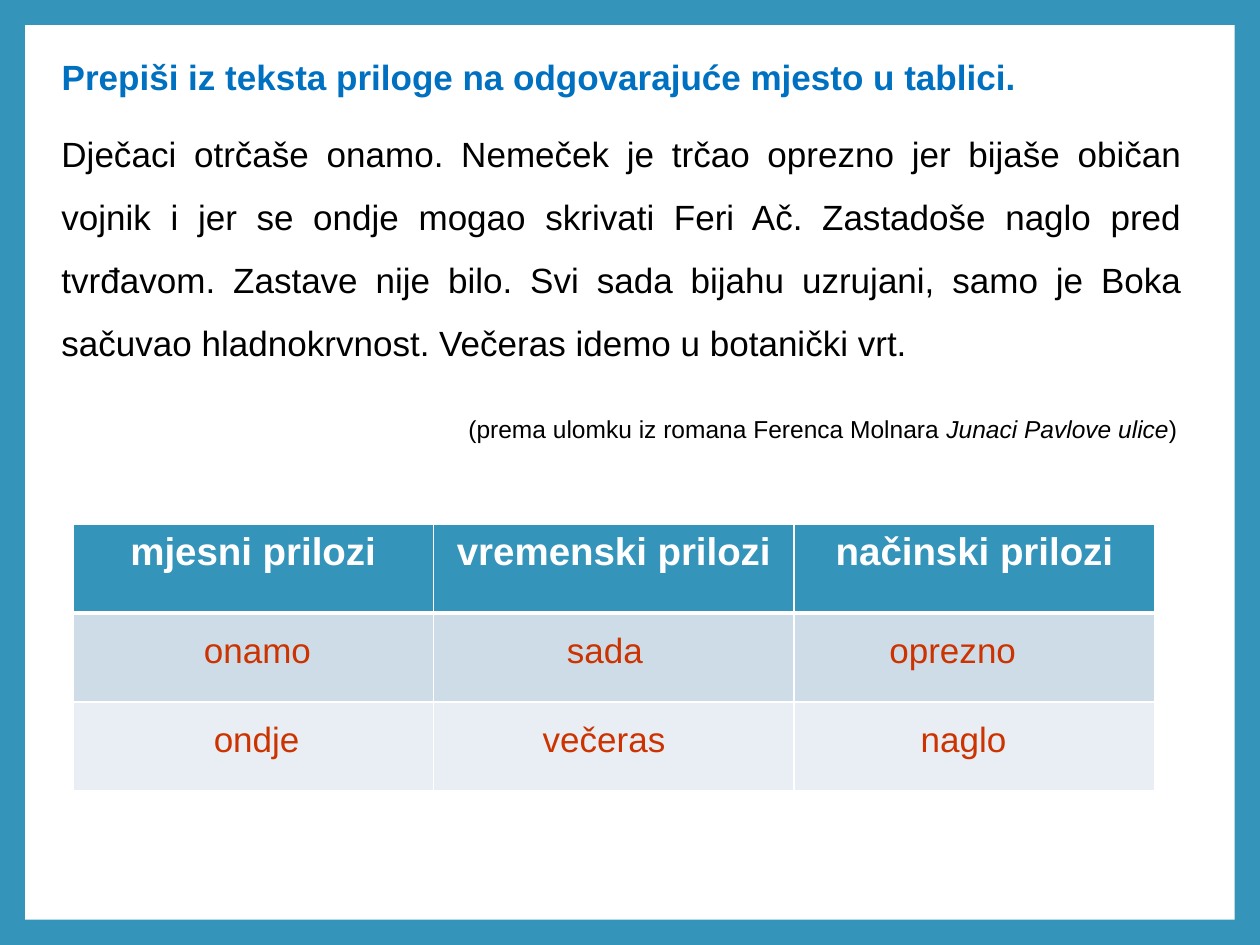
import pptx
import pptx.util
import pptx.dml.color
import pptx.enum.shapes
import pptx.enum.text
import pptx.oxml

Cm = pptx.util.Cm
Pt = pptx.util.Pt
ALIGN = pptx.enum.text.PP_ALIGN
TEAL, WHITE, BLACK, BLUE, RED = "3494BA", "FFFFFF", "000000", "0070C0", "CC3300"


def colour(target, value):
    target.rgb = pptx.dml.color.RGBColor.from_string(value)


def write(paragraph, text, shade, **formats):
    run = paragraph.add_run()
    run.text = text
    colour(run.font.color, shade)
    for name, value in {"name": "Arial", "size": Pt(20), "bold": False, **formats}.items():
        setattr(run.font, name, value)


deck = pptx.Presentation()
deck.slide_width, deck.slide_height = Cm(25.4), Cm(19.05)
slide = deck.slides.add_slide(deck.slide_layouts[5])
slide.background.fill.solid()
colour(slide.background.fill.fore_color, TEAL)

page = slide.shapes.add_shape(
    pptx.enum.shapes.MSO_SHAPE.RECTANGLE, Cm(0.51), Cm(0.51), Cm(24.38), Cm(18.03))
page.shadow.inherit = False
page.fill.solid()
colour(page.fill.fore_color, WHITE)
page.line.fill.background()

task = slide.shapes.title
task.element.addprevious(page.element)
placement = {"left": Cm(0.99), "top": Cm(0.99), "width": Cm(23.09), "height": Cm(1.12)}
for name, value in placement.items():
    setattr(task, name, value)
task_format = {"word_wrap": True, "vertical_anchor": pptx.enum.text.MSO_ANCHOR.TOP,
               "auto_size": pptx.enum.text.MSO_AUTO_SIZE.NONE}
for name, value in task_format.items():
    setattr(task.text_frame, name, value)
task.text_frame.paragraphs[0].alignment = ALIGN.LEFT
write(task.text_frame.paragraphs[0], "Prepiši iz teksta priloge na odgovarajuće mjesto u tablici.",
      BLUE, bold=True)

adverbs = slide.shapes.add_table(3, 3, Cm(1.47), Cm(10.57), Cm(21.81), Cm(5.37)).table
for column in adverbs.columns:
    column.width = Cm(7.27)
headings = ["mjesni prilozi", "vremenski prilozi", "načinski prilozi"]
for row_number, row_fill in enumerate([TEAL, "CEDCE7", "E8EEF3"]):
    adverbs.rows[row_number].height = Cm(1.79)
    for column_number, heading in enumerate(headings):
        cell = adverbs.cell(row_number, column_number)
        if row_number == 0:
            cell.text_frame.paragraphs[0].alignment = ALIGN.CENTER
            write(cell.text_frame.paragraphs[0], heading, WHITE, size=Pt(22), bold=True)
        borders = {"lnL": 1, "lnR": 1, "lnT": 3 if row_number == 1 else 1,
                   "lnB": 3 if row_number == 0 else 1}
        for edge, points in borders.items():
            cell.fill.background()
            cell._tc.get_or_add_tcPr().append(pptx.oxml.parse_xml(
                f'<a:{edge} xmlns:a="http://schemas.openxmlformats.org/drawingml/2006/main" '
                f'w="{Pt(points)}"><a:solidFill><a:srgbClr val="{WHITE}"/></a:solidFill></a:{edge}>'))
        cell.fill.solid()
        colour(cell.fill.fore_color, row_fill)
        properties = cell._tc.tcPr
        properties.append(properties.find("{*}solidFill"))

story = ("Dječaci otrčaše onamo. Nemeček je trčao oprezno jer bijaše običan vojnik i jer se ondje "
         "mogao skrivati Feri Ač. Zastadoše naglo pred tvrđavom. Zastave nije bilo. Svi sada bijahu "
         "uzrujani, samo je Boka sačuvao hladnokrvnost. Večeras idemo u botanički vrt.")
credit = [("(prema ulomku iz romana Ferenca Molnara ", False), ("Junaci Pavlove ulice", True),
          (")", False)]
passages = [
    ((0.99, 2.13, 23.09, 5.44), ALIGN.JUSTIFY, 20, [(story, False)]),
    ((7.11, 7.92, 16.87, 1.04), ALIGN.RIGHT, 14, credit),
]
for box, alignment, size, pieces in passages:
    passage = slide.shapes.add_textbox(*map(Cm, box)).text_frame
    passage.word_wrap = True
    paragraph = passage.paragraphs[0]
    for name, value in {"alignment": alignment, "line_spacing": 1.5}.items():
        setattr(paragraph, name, value)
    for text, italic in pieces:
        write(paragraph, text, BLACK, size=Pt(size), italic=italic)

answers = [
    (12.55, [("onamo", 3.86, 2.69), ("sada", 11.18, 2.13), ("oprezno", 17.68, 3.1)]),
    (14.33, [("ondje", 4.06, 2.26), ("večeras", 10.69, 3), ("naglo", 18.31, 2.26)]),
]
for top, words in answers:
    for word, left, width in words:
        answer = slide.shapes.add_textbox(Cm(left), Cm(top), Cm(width), Cm(1.12)).text_frame
        answer.word_wrap = False
        write(answer.paragraphs[0], word, RED)

deck.save("out.pptx")
